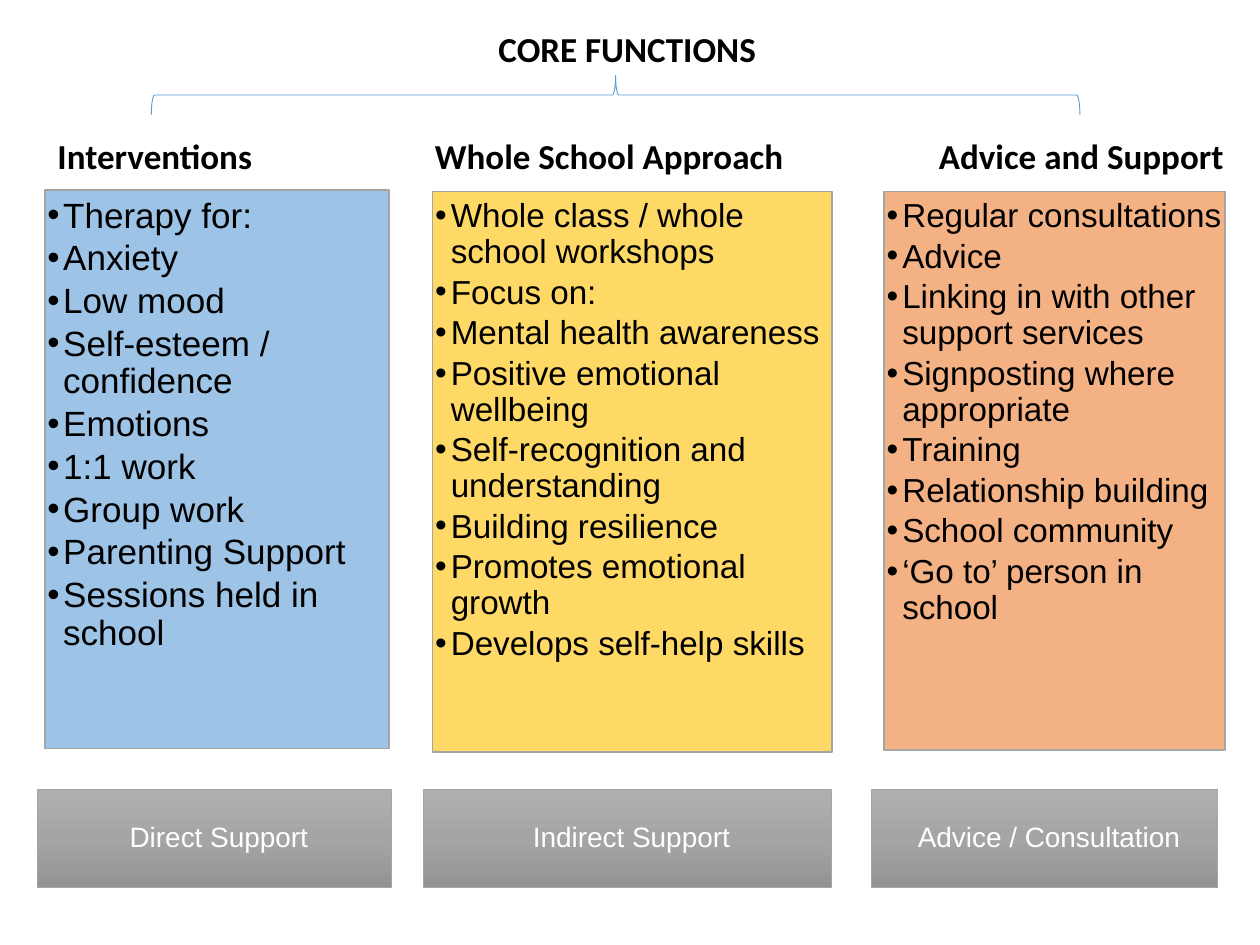
import copy

import lxml.etree
import pptx
import pptx.dml.color
import pptx.enum.shapes
import pptx.enum.text
import pptx.oxml.ns
import pptx.util

Pt = pptx.util.Pt
Align = pptx.enum.text.PP_ALIGN
Anchor = pptx.enum.text.MSO_ANCHOR
Shape = pptx.enum.shapes.MSO_SHAPE
qn = pptx.oxml.ns.qn

COLORS = {
    "text": "000000",
    "light": "FFFFFF",
    "border": "A5A5A5",
    "brace": "5B9BD5",
    "blue": "9DC3E6",
    "yellow": "FFD966",
    "orange": "F4B183",
    "gray_top": "AFAFAF",
    "gray_middle": "A5A5A5",
    "gray_bottom": "939393",
}

COLUMNS = [
    {
        "heading": "Interventions", "heading_span": (25.8, 200),
        "placeholder": 1, "fill": "blue", "size": 20,
        "list_area": (25.7, 108.7, 196.7, 319),
        "label": "Direct Support", "label_span": (21.4, 202.5),
        "items": [
            "Therapy for:", "Anxiety", "Low mood", "Self-esteem / confidence",
            "Emotions", "1:1 work", "Group work", "Parenting Support",
            "Sessions held in school",
        ],
    },
    {
        "heading": "Whole School Approach", "heading_span": (241.4, 240),
        "placeholder": 2, "fill": "yellow", "size": 19,
        "list_area": (247.2, 109.4, 228.3, 320.3),
        "label": "Indirect Support", "label_span": (241.8, 233.2),
        "items": [
            "Whole class / whole school workshops", "Focus on:",
            "Mental health awareness", "Positive emotional wellbeing",
            "Self-recognition and understanding", "Building resilience",
            "Promotes emotional growth", "Develops self-help skills",
        ],
    },
    {
        "heading": "Advice and Support", "heading_span": (529.4, 190),
        "placeholder": 4, "fill": "orange", "size": 19,
        "list_area": (505.2, 109.4, 195, 319),
        "label": "Advice / Consultation", "label_span": (498, 198),
        "items": [
            "Regular consultations", "Advice",
            "Linking in with other support services",
            "Signposting where appropriate", "Training",
            "Relationship building", "School community",
            "‘Go to’ person in school",
        ],
    },
]


class SlideBuilder:
    heading_font = "Calibri"
    body_font = "Arial"
    text_margins = (7.2, 3.6, 7.2, 3.6)

    def __init__(self, slide):
        self.slide = slide

    def color(self, name):
        return pptx.dml.color.RGBColor.from_string(COLORS[name])

    def place(self, box, area):
        box.left, box.top, box.width, box.height = map(Pt, area)

    def outline(self, box, color, width):
        box.line.color.rgb = self.color(color)
        box.line.width = Pt(width)

    def frame(self, box, margins, anchor=Anchor.TOP):
        frame = box.text_frame
        frame.word_wrap = True
        frame.auto_size = pptx.enum.text.MSO_AUTO_SIZE.NONE
        frame.vertical_anchor = anchor
        (frame.margin_left, frame.margin_top,
         frame.margin_right, frame.margin_bottom) = map(Pt, margins)
        return frame

    def format(self, para, font, size, color="text", bold=False,
               align=Align.LEFT, spacing=1.0, after=0):
        para.alignment = align
        para.line_spacing = spacing
        para.space_before = Pt(0)
        para.space_after = Pt(after)
        for span in para.runs:
            span.font.name = font
            span.font.size = Pt(size)
            span.font.bold = bold
            span.font.color.rgb = self.color(color)

    def bullet(self, para, margin):
        properties = para._p.get_or_add_pPr()
        properties.set("marL", str(Pt(margin)))
        properties.set("indent", str(-Pt(margin)))
        lxml.etree.SubElement(properties, qn("a:buFont"), typeface=self.body_font)
        lxml.etree.SubElement(properties, qn("a:buChar"), char="•")

    def heading_text(self, box, text, align):
        frame = self.frame(box, self.text_margins)
        frame.text = text
        self.format(frame.paragraphs[0], self.heading_font, 20, bold=True, align=align)

    def title(self, text, area):
        box = self.slide.shapes.title
        self.place(box, area)
        self.heading_text(box, text, Align.CENTER)

    def heading(self, text, area):
        box = self.slide.shapes.add_textbox(*map(Pt, area))
        self.heading_text(box, text, Align.LEFT)

    def bullet_list(self, placeholder, items, area, fill, size):
        box = self.slide.placeholders[placeholder]
        self.place(box, area)
        box.fill.solid()
        box.fill.fore_color.rgb = self.color(fill)
        self.outline(box, "border", 1)
        frame = self.frame(box, (1.4, 4.3, 1.4, 1.4))
        frame.text = "\n".join(items)
        for para in frame.paragraphs:
            self.format(para, self.body_font, size, spacing=0.9, after=0.14 * size)
            self.bullet(para, 9)

    def label(self, text, area):
        box = self.slide.shapes.add_shape(Shape.RECTANGLE, *map(Pt, area))
        box.shadow.inherit = False
        self.outline(box, "border", 0.5)
        box.fill.gradient()
        box.fill.gradient_angle = 270
        stop_list = box._element.spPr.find(".//" + qn("a:gsLst"))
        stop_list.insert(1, copy.deepcopy(stop_list[0]))
        names = ("gray_top", "gray_middle", "gray_bottom")
        for stop, name, position in zip(box.fill.gradient_stops, names, (0, 0.5, 1)):
            stop.color.rgb = self.color(name)
            stop.position = position
        frame = self.frame(box, (7.2, 0, 2.2, 0), Anchor.MIDDLE)
        frame.text = text
        self.format(frame.paragraphs[0], self.body_font, 16, "light",
                    align=Align.CENTER, spacing=0.9)

    def brace(self, area):
        box = self.slide.shapes.add_shape(Shape.LEFT_BRACE, *map(Pt, area))
        box.rotation = 90
        box.shadow.inherit = False
        box.fill.background()
        self.outline(box, "brace", 0.5)

    def remove_empty_placeholders(self):
        for box in list(self.slide.placeholders):
            if not box.text_frame.text:
                box._element.getparent().remove(box._element)


def main():
    deck = pptx.Presentation()
    deck.slide_width, deck.slide_height = Pt(720), Pt(540)
    page = SlideBuilder(deck.slides.add_slide(deck.slide_layouts[4]))
    page.title("CORE FUNCTIONS", (253.4, 12.2, 210.2, 31.7))
    page.brace((340.6, -211, 22.3, 530.6))
    for column in COLUMNS:
        left, width = column["heading_span"]
        page.heading(column["heading"], (left, 73.4, width, 31.7))
        page.bullet_list(column["placeholder"], column["items"],
                         column["list_area"], column["fill"], column["size"])
        left, width = column["label_span"]
        page.label(column["label"], (left, 451, width, 56))
    page.remove_empty_placeholders()
    deck.save("out.pptx")


if __name__ == "__main__":
    main()
